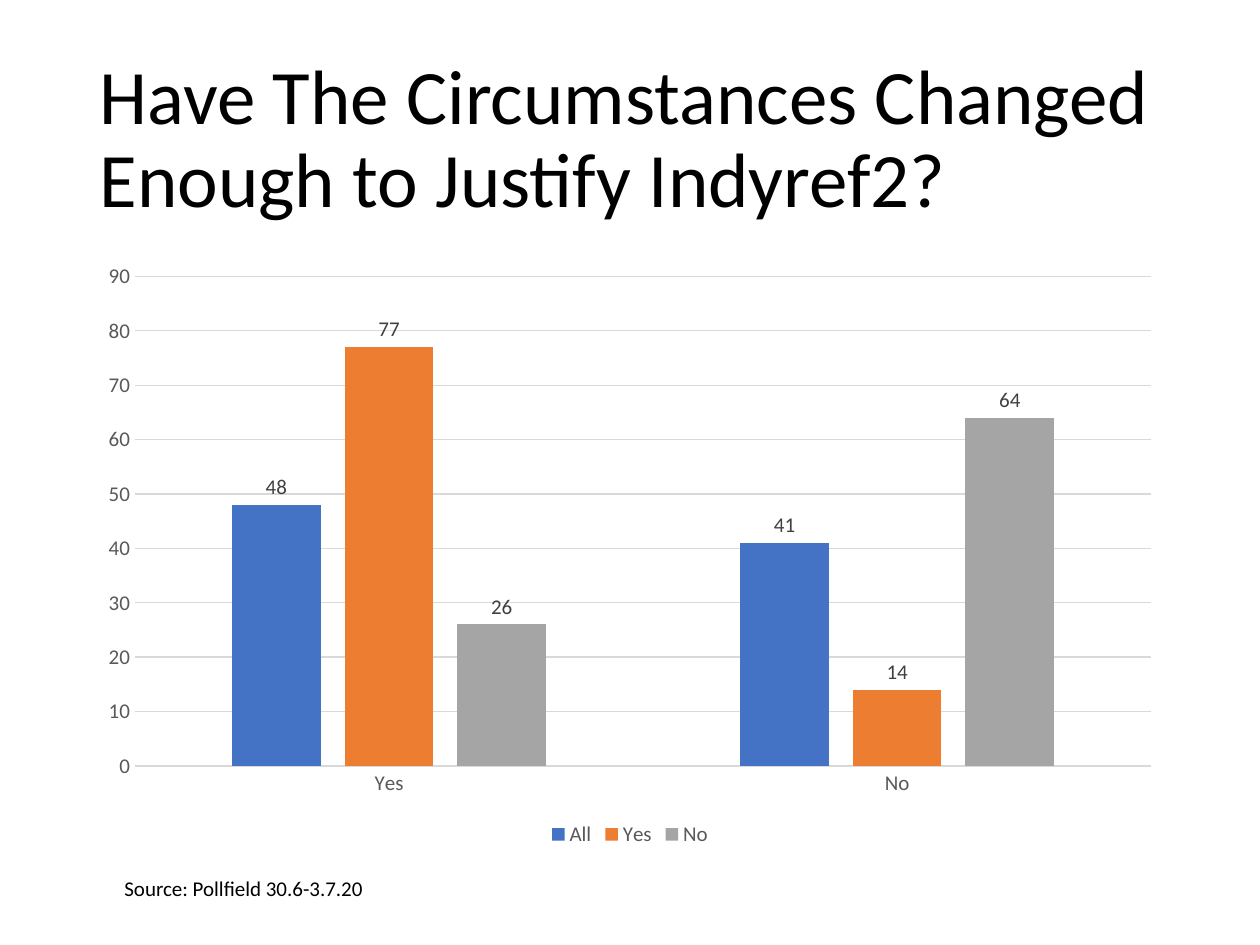
import pptx
import pptx.util
import pptx.dml.color
import pptx.chart.data
import pptx.enum.chart
import pptx.enum.text

FONT = "Calibri"
PX = 914400 / 126


def px(n):
    return pptx.util.Emu(round(n * PX))


def style(font, size, color):
    font.name = FONT
    font.size = pptx.util.Pt(size)
    font.bold = False
    font.color.rgb = pptx.dml.color.RGBColor.from_string(color)


prs = pptx.Presentation()
prs.slide_width, prs.slide_height = px(1260), px(945)
s = prs.slides.add_slide(prs.slide_layouts[5])

# Title
sp = s.shapes.title
sp.left, sp.top, sp.width, sp.height = px(87), px(50), px(1086), px(183)
tf = sp.text_frame
tf.word_wrap = True
tf.auto_size = pptx.enum.text.MSO_AUTO_SIZE.NONE
tf.vertical_anchor = pptx.enum.text.MSO_ANCHOR.MIDDLE
p = tf.paragraphs[0]
p.alignment = pptx.enum.text.PP_ALIGN.LEFT
p.line_spacing = 0.9
r = p.add_run()
r.text = "Have The Circumstances Changed Enough to Justify Indyref2?"
style(r.font, 44, "000000")

# Clustered column chart
series = [
    ("All", (48, 41), "4472C4"),
    ("Yes", (77, 14), "ED7D31"),
    ("No", (26, 64), "A5A5A5"),
]
data = pptx.chart.data.CategoryChartData()
data.categories = ["Yes", "No"]
for name, values, color in series:
    data.add_series(name, values)
chart = s.shapes.add_chart(
    pptx.enum.chart.XL_CHART_TYPE.COLUMN_CLUSTERED,
    px(87), px(252), px(1086), px(600), data).chart
style(chart.font, 10, "000000")
chart.has_title = False

plot = chart.plots[0]
plot.gap_width = 219
plot.overlap = -27
plot.vary_by_categories = False
for ser, (name, values, color) in zip(plot.series, series):
    ser.format.fill.solid()
    ser.format.fill.fore_color.rgb = pptx.dml.color.RGBColor.from_string(color)
    labels = ser.data_labels
    labels.show_value = True
    labels.position = pptx.enum.chart.XL_LABEL_POSITION.OUTSIDE_END
    style(labels.font, 12, "404040")

# Axes and gridlines
cat, val = chart.category_axis, chart.value_axis
for axis in (cat, val):
    axis.major_tick_mark = pptx.enum.chart.XL_TICK_MARK.NONE
    axis.minor_tick_mark = pptx.enum.chart.XL_TICK_MARK.NONE
    style(axis.tick_labels.font, 12, "595959")
val.minimum_scale, val.maximum_scale, val.major_unit = 0, 90, 10
val.has_major_gridlines = True
val.format.line.fill.background()
for line in (cat.format.line, val.major_gridlines.format.line):
    line.color.rgb = pptx.dml.color.RGBColor.from_string("D9D9D9")
    line.width = pptx.util.Pt(0.75)

# Legend
chart.has_legend = True
chart.legend.position = pptx.enum.chart.XL_LEGEND_POSITION.BOTTOM
chart.legend.include_in_layout = False
style(chart.legend.font, 12, "595959")

# Source line
sp = s.shapes.add_textbox(px(112), px(869), px(857), px(38))
tf = sp.text_frame
tf.word_wrap = True
tf.auto_size = pptx.enum.text.MSO_AUTO_SIZE.SHAPE_TO_FIT_TEXT
r = tf.paragraphs[0].add_run()
r.text = "Source: Pollfield 30.6-3.7.20"
style(r.font, 12, "000000")

prs.save("out.pptx")
